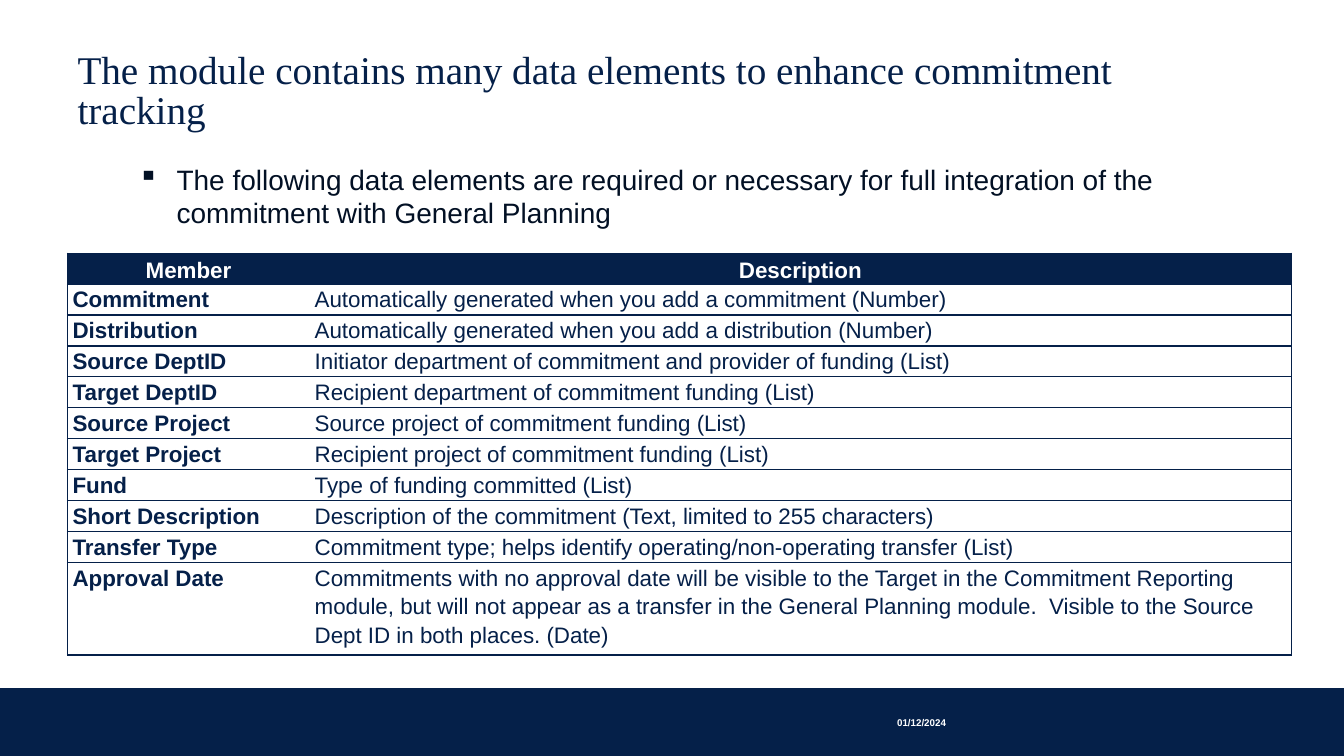
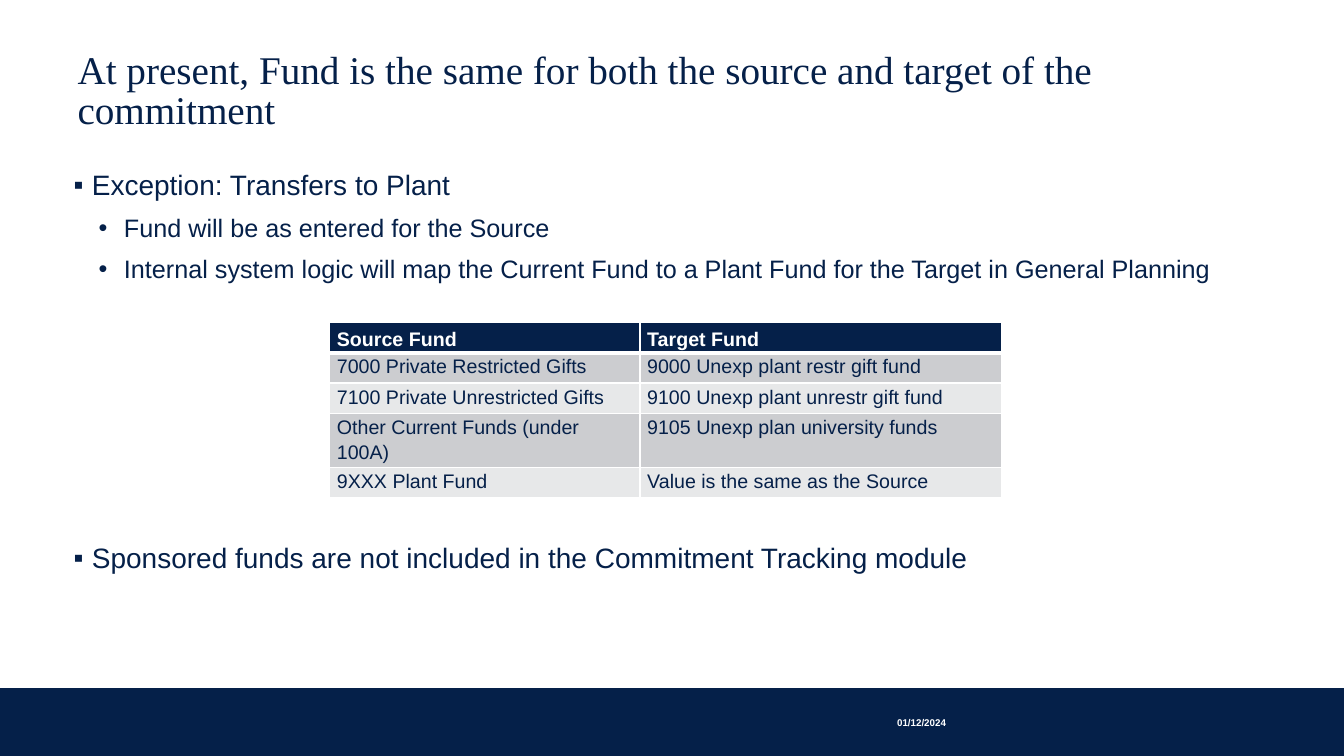
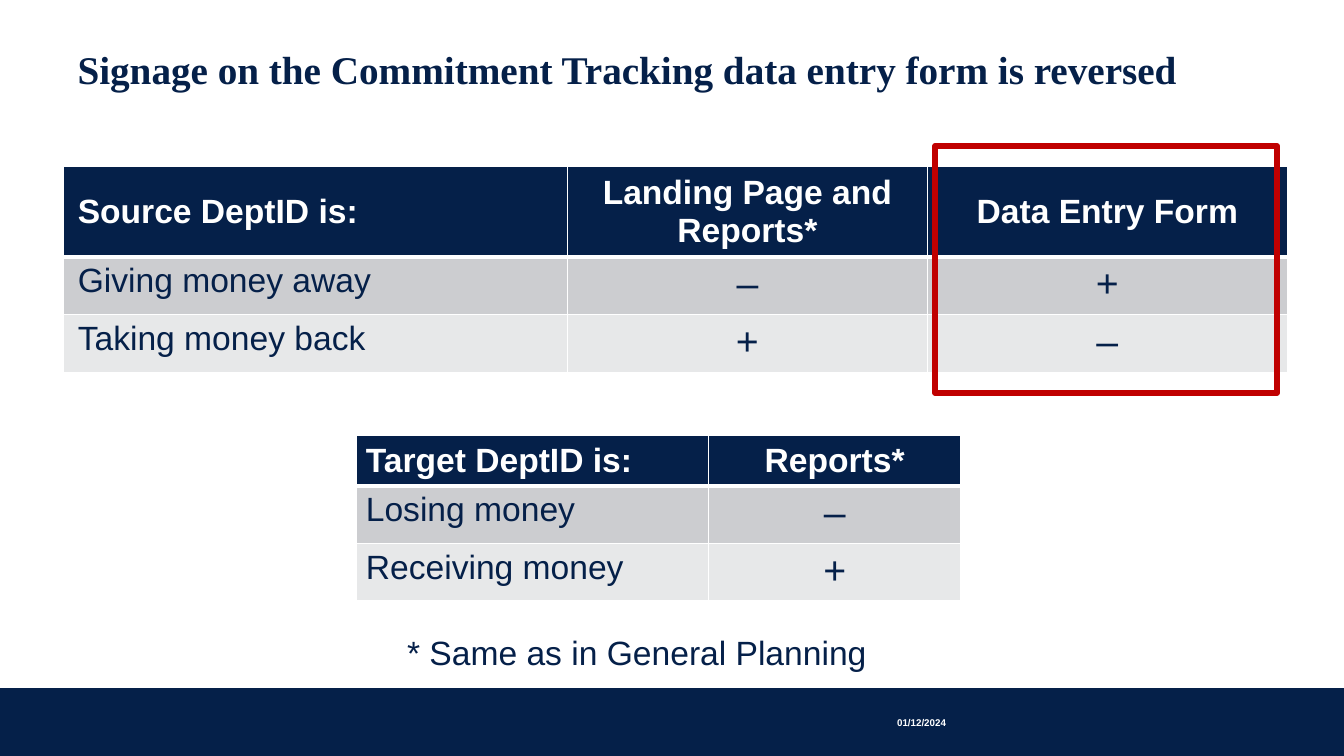
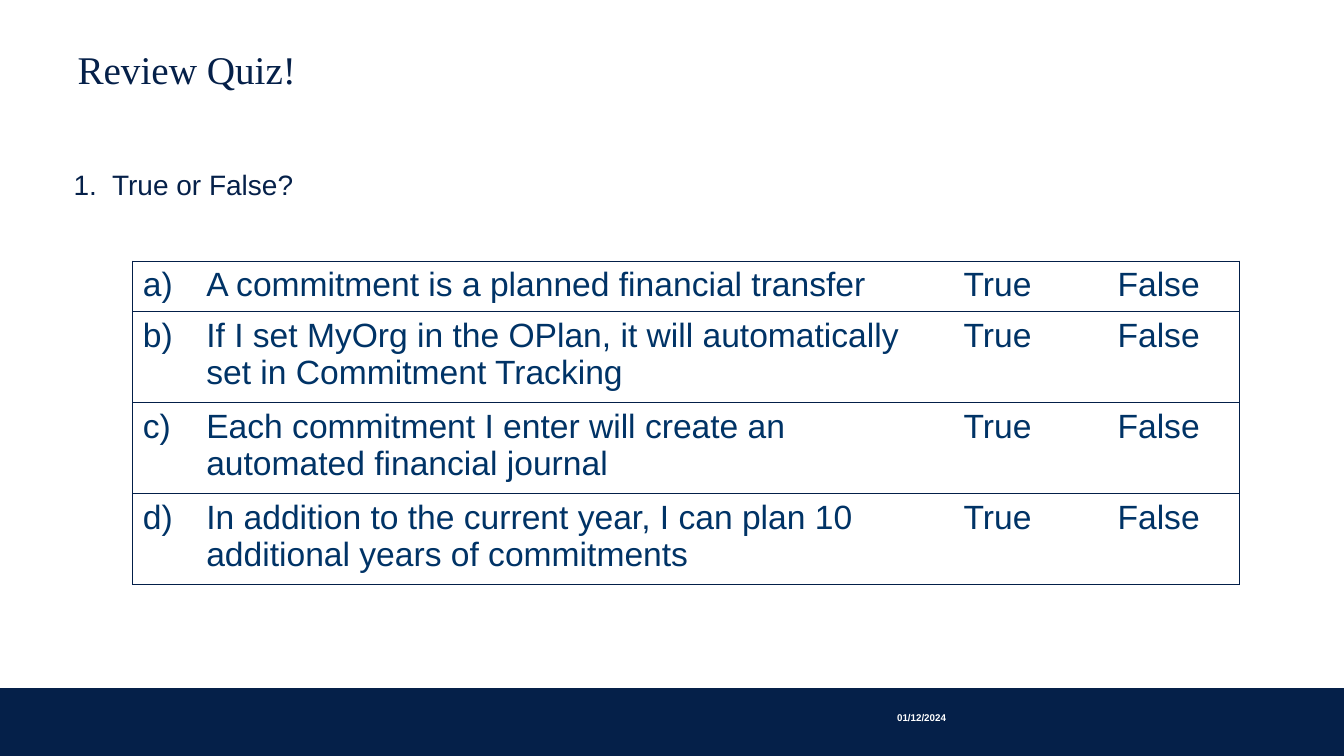
from lxml import etree
from pptx import Presentation, util as u
from pptx.dml.color import RGBColor
from pptx.enum import shapes, text as t
from pptx.oxml import ns

Cm, Pt = u.Cm, u.Pt
rgb = RGBColor.from_string

NAVY, WHITE, RED = "052049", "FFFFFF", "C00000"
BANDS = ("CCCDD0", "E7E8E9")
LEFT, CENTER = t.PP_ALIGN.LEFT, t.PP_ALIGN.CENTER


def write(para, words, size=20, color=NAVY, bold=False, font="Arial", align=LEFT,
          spacing=1.0, before=0, bullet=None, margin=0, hang=0, level=0):
    """Fill a paragraph; a bullet is a character or "1." for automatic numbers."""
    para.level = level
    props = para._p.get_or_add_pPr()
    props.set("marL", str(Cm(margin)))
    props.set("indent", str(-Cm(hang)))
    if bullet == "1.":
        etree.SubElement(props, ns.qn("a:buAutoNum"), type="arabicPeriod")
    elif bullet:
        etree.SubElement(props, ns.qn("a:buChar"), char=bullet)
    else:
        etree.SubElement(props, ns.qn("a:buNone"))
    para.alignment = align
    para.line_spacing = spacing
    para.space_before = Pt(before)
    span = para.add_run()
    span.text = words
    span.font.name, span.font.size, span.font.bold = font, Pt(size), bold
    span.font.color.rgb = rgb(color)


def add_grid(page, left, top, widths, heights, rows, aligns, sizes, header=True,
             header_aligns=None, bold_first=False, fills=BANDS, ink=NAVY, inset=(0.25, 0.13),
             spacing=1.0, edge=WHITE, edge_width=1, dividers=True, header_edge=3):
    """Add a table; dividers are the vertical lines between columns."""
    grid = page.shapes.add_table(len(rows), len(widths), Cm(left), Cm(top),
                                 Cm(sum(widths)), Cm(sum(heights))).table
    grid.first_row = grid.horz_banding = False
    for column, width in zip(grid.columns, widths):
        column.width = Cm(width)
    for r, (row, height) in enumerate(zip(rows, heights)):
        grid.rows[r].height = Cm(height)
        heading = header and r == 0
        for c, words in enumerate(row):
            cell = grid.cell(r, c)
            cell.margin_left = cell.margin_right = Cm(inset[0])
            cell.margin_top = cell.margin_bottom = Cm(inset[1])
            cell.vertical_anchor = t.MSO_ANCHOR.MIDDLE if heading else t.MSO_ANCHOR.TOP
            line_widths = {
                "lnL": edge_width if dividers or c == 0 else 0,
                "lnR": edge_width if dividers or c == len(row) - 1 else 0,
                "lnT": header_edge if header and r == 1 else edge_width,
                "lnB": header_edge if heading else edge_width,
            }
            props = cell._tc.get_or_add_tcPr()
            for side, width in line_widths.items():
                line = etree.SubElement(props, ns.qn("a:" + side), w=str(Pt(width)))
                if width:
                    paint = etree.SubElement(line, ns.qn("a:solidFill"))
                    etree.SubElement(paint, ns.qn("a:srgbClr"), val=edge)
                else:
                    etree.SubElement(line, ns.qn("a:noFill"))
            if fills:
                cell.fill.solid()
                cell.fill.fore_color.rgb = rgb(NAVY if heading else fills[(r - 1) % len(fills)])
            else:
                cell.fill.background()
            write(cell.text_frame.paragraphs[0], words,
                  size=sizes[0] if heading else sizes[c],
                  color=WHITE if heading else ink,
                  bold=heading or (bold_first and c == 0),
                  align=(header_aligns or aligns)[c] if heading else aligns[c],
                  spacing=spacing)


deck = Presentation()
deck.slide_width, deck.slide_height = Cm(33.87), Cm(19.05)
master = deck.slide_master
CONTENT, TITLE_ONLY = deck.slide_layouts[1], deck.slide_layouts[5]

# Titles and dates
headings = [
    ("The module contains many data elements to enhance commitment tracking", TITLE_ONLY),
    ("At present, Fund is the same for both the source and target of the commitment", CONTENT),
    ("Signage on the Commitment Tracking data entry form is reversed", TITLE_ONLY),
    ("Review Quiz!", CONTENT),
]
pages = []
for number, (heading, layout) in enumerate(headings, 1):
    page = deck.slides.add_slide(layout)
    pages.append(page)
    title = page.shapes.title
    title.left, title.top, title.width, title.height = Cm(1.7), Cm(1.19), Cm(29.95), Cm(2.29)
    title.text_frame.vertical_anchor = t.MSO_ANCHOR.TOP
    title.text_frame.auto_size = t.MSO_AUTO_SIZE.NONE
    write(title.text_frame.paragraphs[0], heading, size=28, font="Times New Roman",
          bold=number == 3, spacing=0.85)
    if layout is CONTENT:
        body = page.placeholders[1]
        body.left, body.top, body.width, body.height = Cm(1.6), Cm(4.19), Cm(30.84), Cm(11.15)
        body.text_frame.vertical_anchor = t.MSO_ANCHOR.TOP
        body.text_frame.auto_size = t.MSO_AUTO_SIZE.NONE
    date = page.shapes.add_textbox(Cm(22.61), Cm(17.93), Cm(3.43), Cm(0.3 if number == 4 else 0.43))
    frame = date.text_frame
    frame.margin_left = frame.margin_right = frame.margin_top = frame.margin_bottom = 0
    frame.word_wrap = True
    frame.vertical_anchor = t.MSO_ANCHOR.BOTTOM
    write(frame.paragraphs[0], "01/12/2024", size=7, color=WHITE, bold=True)

# The footer band belongs to the master, behind everything else
band = pages[0].shapes.add_shape(shapes.MSO_SHAPE.RECTANGLE, 0, Cm(17.37), deck.slide_width, Cm(1.68))
band.shadow.inherit = False
band.fill.solid()
band.fill.fore_color.rgb = rgb(NAVY)
band.line.color.rgb = rgb(NAVY)
band.line.width = Pt(1.5)
band.element.nvSpPr.cNvPr.set("id", "20")
master.shapes.element.insert(2, band.element)

# Slide 1: data elements
page = pages[0]
members = [
    ("Member", "Description"),
    ("Commitment", "Automatically generated when you add a commitment (Number)"),
    ("Distribution", "Automatically generated when you add a distribution (Number)"),
    ("Source DeptID", "Initiator department of commitment and provider of funding (List)"),
    ("Target DeptID", "Recipient department of commitment funding (List)"),
    ("Source Project", "Source project of commitment funding (List)"),
    ("Target Project", "Recipient project of commitment funding (List)"),
    ("Fund", "Type of funding committed (List)"),
    ("Short Description", "Description of the commitment (Text, limited to 255 characters)"),
    ("Transfer Type", "Commitment type; helps identify operating/non-operating transfer (List)"),
    ("Approval Date",
     "Commitments with no approval date will be visible to the Target in the Commitment Reporting "
     "module, but will not appear as a transfer in the General Planning module.  Visible to the "
     "Source Dept ID in both places. (Date)"),
]
add_grid(page, 1.7, 6.38, [6.1, 24.74], [0.74] + [0.72] * 9 + [2.16], members,
         aligns=[LEFT, LEFT], header_aligns=[CENTER, CENTER], sizes=[16, 16], bold_first=True,
         fills=[WHITE], inset=(0.13, 0), spacing=1.15, edge=NAVY, dividers=False, header_edge=1)
intro = page.shapes.add_textbox(Cm(3.23), Cm(3.96), Cm(26.16), Cm(1.96))
intro.text_frame.word_wrap = True
write(intro.text_frame.paragraphs[0],
      "The following data elements are required or necessary for full integration of the "
      "commitment with General Planning",
      color="021024", bullet="▪", margin=0.97, hang=0.97)

# Slide 2: fund mapping
page = pages[1]
outer = dict(bullet="▪", margin=0.46, hang=0.46)
inner = dict(bullet="•", margin=1.27, hang=0.64, level=1, size=18, before=10)
points = [
    ("Exception: Transfers to Plant", outer),
    ("Fund will be as entered for the Source", inner),
    ("Internal system logic will map the Current Fund to a Plant Fund for the Target in General Planning",
     inner),
    ("Sponsored funds are not included in the Commitment Tracking module", outer | dict(before=186)),
]
frame = page.placeholders[1].text_frame
for index, (words, style) in enumerate(points):
    para = frame.add_paragraph() if index else frame.paragraphs[0]
    write(para, words, spacing=0.9, **style)
funds = [
    ("Source Fund", "Target Fund"),
    ("7000 Private Restricted Gifts", "9000 Unexp plant restr gift fund"),
    ("7100 Private Unrestricted Gifts", "9100 Unexp plant unrestr gift fund"),
    ("Other Current Funds (under 100A)", "9105 Unexp plan university funds"),
    ("9XXX Plant Fund", "Value is the same as the Source"),
]
add_grid(page, 8.31, 8.13, [7.82, 9.1], [0.76, 0.76, 0.76, 1.27, 0.76], funds,
         aligns=[LEFT, LEFT], sizes=[14, 14], inset=(0.18, 0), spacing=1.15)

# Slide 3: signs
page = pages[2]
source_signs = [
    ("Source DeptID is:", "Landing Page and Reports*", "Data Entry Form"),
    ("Giving money away", "–", "+"),
    ("Taking money back", "+", "–"),
]
target_signs = [
    ("Target DeptID is:", "Reports*"),
    ("Losing money", "–"),
    ("Receiving money", "+"),
]
add_grid(page, 1.6, 4.19, [12.7, 9.07, 9.07], [2.11, 1.35, 1.35], source_signs,
         aligns=[LEFT, CENTER, CENTER], sizes=[24, 28, 28], inset=(0.36, 0.13))
add_grid(page, 8.97, 10.97, [8.89, 6.35], [1.2, 1.35, 1.35], target_signs,
         aligns=[LEFT, CENTER], sizes=[24, 28])
footnote = page.shapes.add_textbox(Cm(10.01), Cm(15.8), Cm(12.22), Cm(1.27))
footnote.text_frame.word_wrap = True
write(footnote.text_frame.paragraphs[0], "* Same as in General Planning", size=24)
highlight = page.shapes.add_shape(shapes.MSO_SHAPE.RECTANGLE, Cm(23.57), Cm(3.68), Cm(8.61), Cm(6.22))
highlight.shadow.inherit = False
highlight.fill.background()
highlight.line.color.rgb = rgb(RED)
highlight.line.width = Pt(4.5)

# Slide 4: quiz
page = pages[3]
write(page.placeholders[1].text_frame.paragraphs[0], "True or False?", spacing=0.9,
      bullet="1.", margin=0.97, hang=0.97)
statements = [
    "A commitment is a planned financial transfer",
    "If I set MyOrg in the OPlan, it will automatically set in Commitment Tracking",
    "Each commitment I enter will create an automated financial journal",
    "In addition to the current year, I can plan 10 additional years of commitments",
]
quiz = [(f"{letter})", statement, "True", "False") for letter, statement in zip("abcd", statements)]
add_grid(page, 3.35, 6.58, [1.6, 18.16, 4.06, 4.06], [1.19] + [2.16] * 3, quiz,
         aligns=[LEFT, LEFT, CENTER, CENTER], sizes=[24] * 4, header=False, fills=None,
         ink="003366", edge="031F49", edge_width=0.75, dividers=False)

deck.save("out.pptx")
